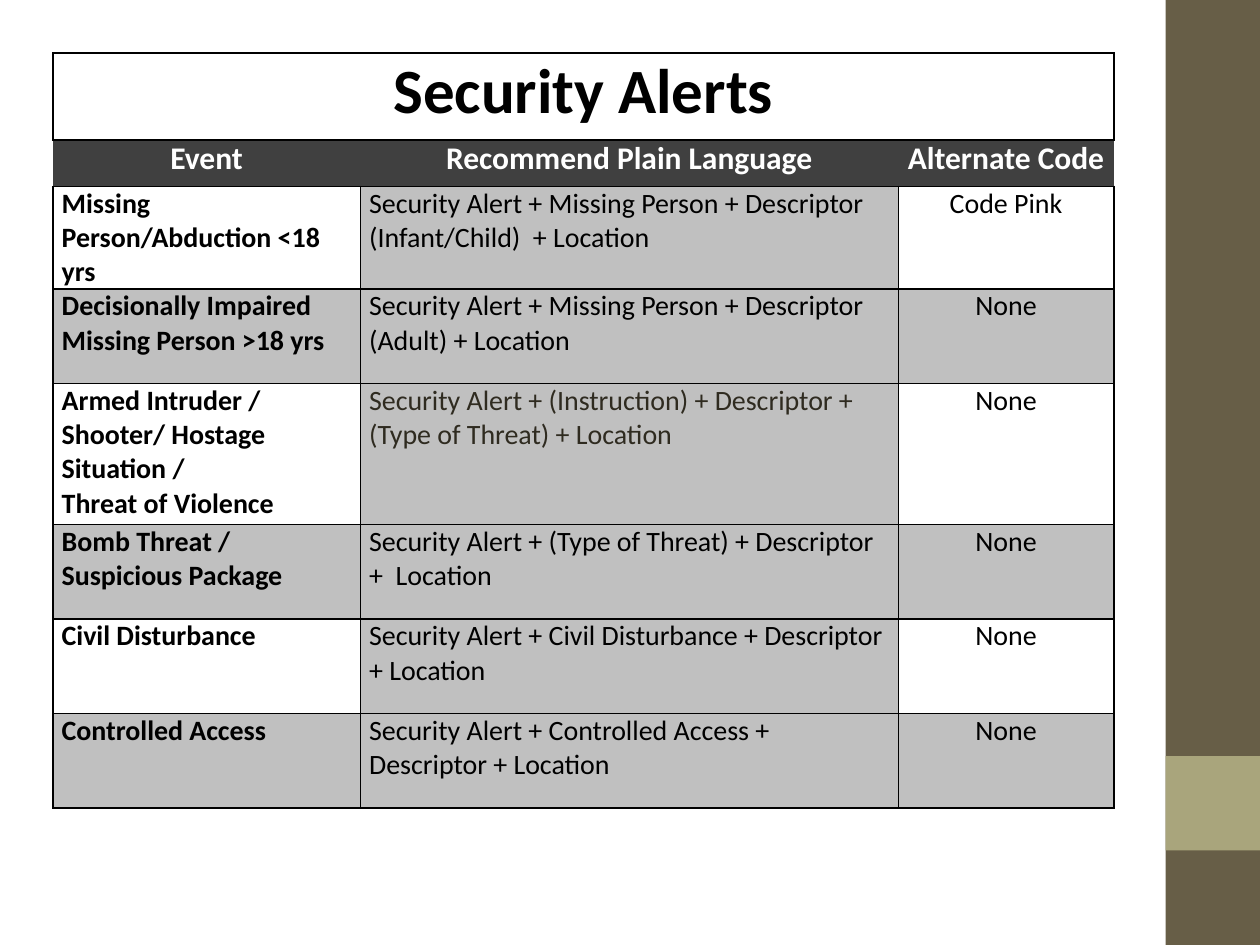
from lxml.etree import SubElement as Sub
from pptx import Presentation
from pptx.dml.color import RGBColor as RGB
from pptx.enum.shapes import MSO_SHAPE as Shape
from pptx.enum.text import PP_ALIGN as Align
from pptx.oxml.ns import qn
from pptx.util import Inches, Pt

BLACK = RGB(0x00, 0x00, 0x00)
WHITE = RGB(0xFF, 0xFF, 0xFF)
DARK = RGB(0x40, 0x40, 0x40)
GRAY = RGB(0xC0, 0xC0, 0xC0)
INK = RGB(0x2F, 0x2B, 0x20)
BROWN = RGB(0x67, 0x5E, 0x47)
OLIVE = RGB(0xA9, 0xA5, 0x7C)

COLS = [2.44, 4.27, 1.71]
ROWS = [0.69, 0.37, 0.75, 0.75, 1.12, 0.75, 0.75, 0.75]
HEADS = ["Event", "Recommend Plain Language", "Alternate Code"]
ALERTS = [
    ("Missing Person/Abduction <18 yrs",
     "Missing Person + Descriptor (Infant/Child)  + Location", "Code Pink"),
    ("Decisionally Impaired Missing Person >18 yrs",
     "Missing Person + Descriptor (Adult) + Location", "None"),
    ("Armed Intruder / Shooter/ Hostage Situation /\nThreat of Violence",
     "(Instruction) + Descriptor + (Type of Threat) + Location", "None"),
    ("Bomb Threat /\nSuspicious Package",
     "(Type of Threat) + Descriptor +  Location", "None"),
    ("Civil Disturbance",
     "Civil Disturbance + Descriptor + Location", "None"),
    ("Controlled Access",
     "Controlled Access + Descriptor + Location", "None"),
]


def write(frame, text, size=16, color=BLACK, bold=False, align=Align.LEFT):
    frame.text = text
    for para in frame.paragraphs:
        para.alignment = align
        font = para.runs[0].font
        font.name, font.size, font.bold = "Calibri", Pt(size), bold
        font.color.rgb = color


def edge(cell, sides="LRTB"):
    """Draw black lines on the given sides and none on the others."""
    props = cell._tc.get_or_add_tcPr()
    for side in "LRTB":
        line = Sub(props, qn(f"a:ln{side}"), w=str(Pt(1)))
        if side in sides:
            fill = Sub(line, qn("a:solidFill"))
            Sub(fill, qn("a:srgbClr"), val=str(BLACK))
        else:
            Sub(line, qn("a:noFill"))


def style(cell, fill=None, sides="LRTB"):
    cell.margin_left = cell.margin_right = Inches(0.07)
    cell.margin_top = cell.margin_bottom = 0
    edge(cell, sides)
    if fill is None:
        cell.fill.background()
    else:
        cell.fill.solid()
        cell.fill.fore_color.rgb = fill


def block(slide, left, top, width, height, color):
    rect = slide.shapes.add_shape(Shape.RECTANGLE, left, top, width, height)
    rect.shadow.inherit = False
    rect.fill.solid()
    rect.fill.fore_color.rgb = color
    rect.line.fill.background()


def side_bar(slide, left, top, width, height):
    block(slide, left, top, width, height, BROWN)
    block(slide, left, top + height - 2 * width, width, width, OLIVE)


def alert_table(slide, left, top, width, height):
    table = slide.shapes.add_table(len(ROWS), len(COLS), left, top,
                                   width, height).table
    table.horz_banding = False
    for col, size in zip(table.columns, COLS):
        col.width = Inches(size)
    for row, size in zip(table.rows, ROWS):
        row.height = Inches(size)

    # Title across all columns
    for c in range(len(COLS)):
        style(table.cell(0, c))
    title = table.cell(0, 0)
    title.merge(table.cell(0, len(COLS) - 1))
    write(title.text_frame, "Security Alerts", size=36, bold=True,
          align=Align.CENTER)

    # Column heads
    for c, head in enumerate(HEADS):
        cell = table.cell(1, c)
        style(cell, DARK, "TB")
        write(cell.text_frame, head, size=18, color=WHITE, bold=True,
              align=Align.CENTER)

    # Alerts: every other row and the middle column are gray
    for r, (event, plain, code) in enumerate(ALERTS):
        cells = [table.cell(r + 2, c) for c in range(len(COLS))]
        for c, cell in enumerate(cells):
            style(cell, GRAY if r % 2 or c == 1 else None)
        write(cells[0].text_frame, event, bold=True)
        write(cells[1].text_frame, "Security Alert + " + plain,
              color=INK if event.startswith("Armed") else BLACK)
        write(cells[2].text_frame, code, align=Align.CENTER)


def main():
    deck = Presentation()
    deck.slide_width, deck.slide_height = Inches(10), Inches(7.5)
    slide = deck.slides.add_slide(deck.slide_layouts[6])
    side_bar(slide, Inches(9.25), 0, Inches(0.75), Inches(7.5))
    alert_table(slide, Inches(0.42), Inches(0.42),
                Inches(sum(COLS)), Inches(sum(ROWS)))
    deck.save("out.pptx")


if __name__ == "__main__":
    main()
